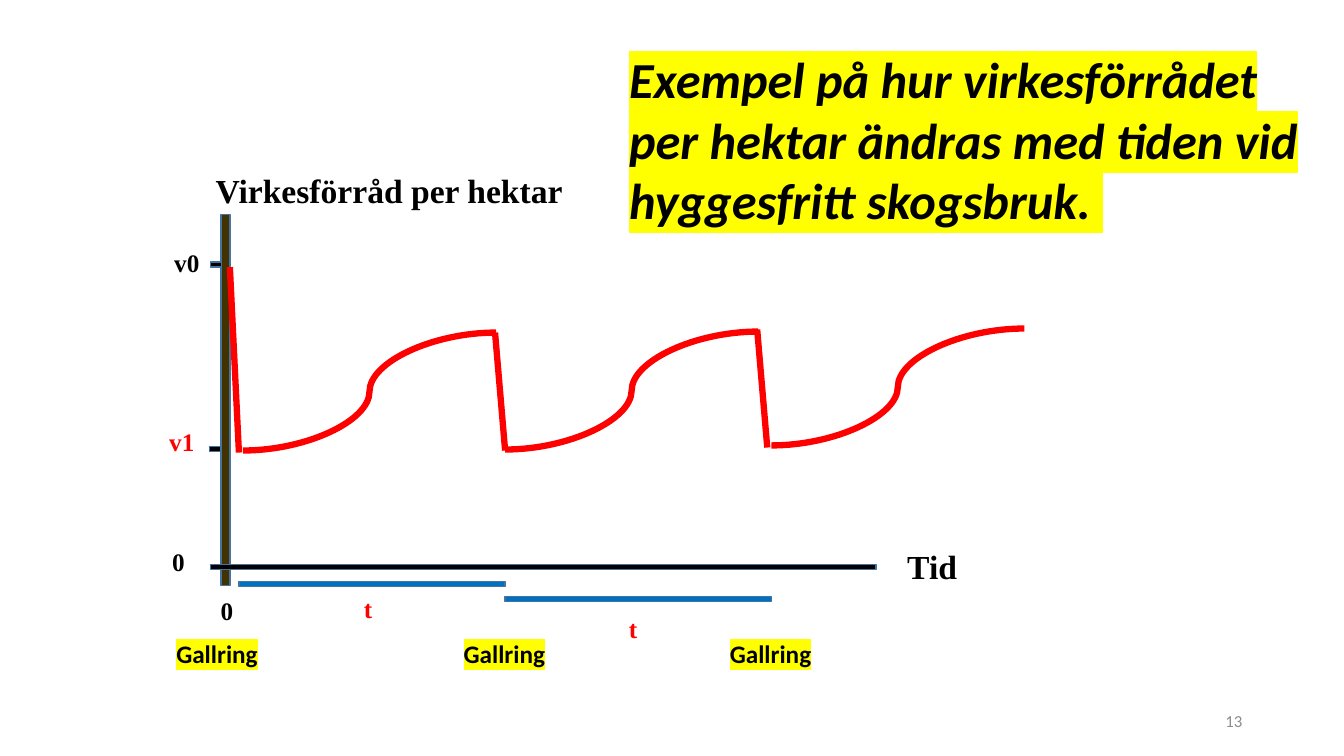
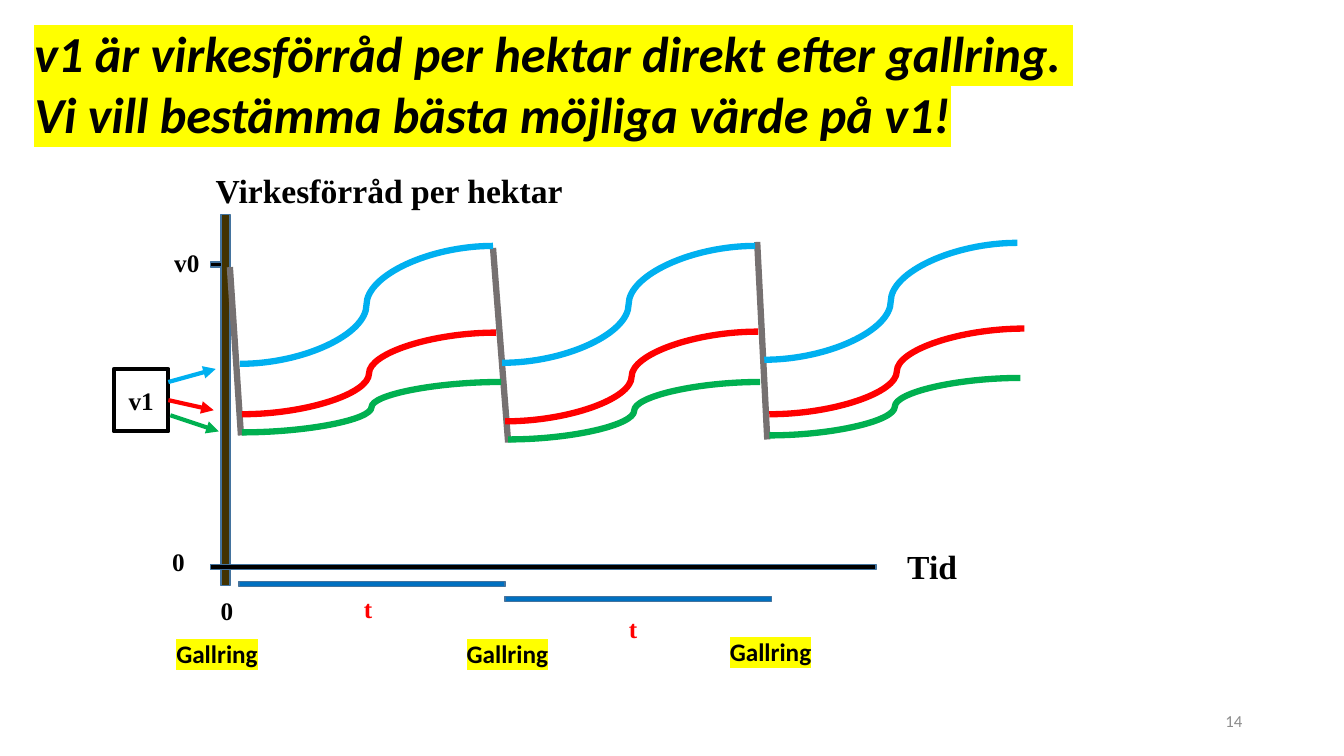
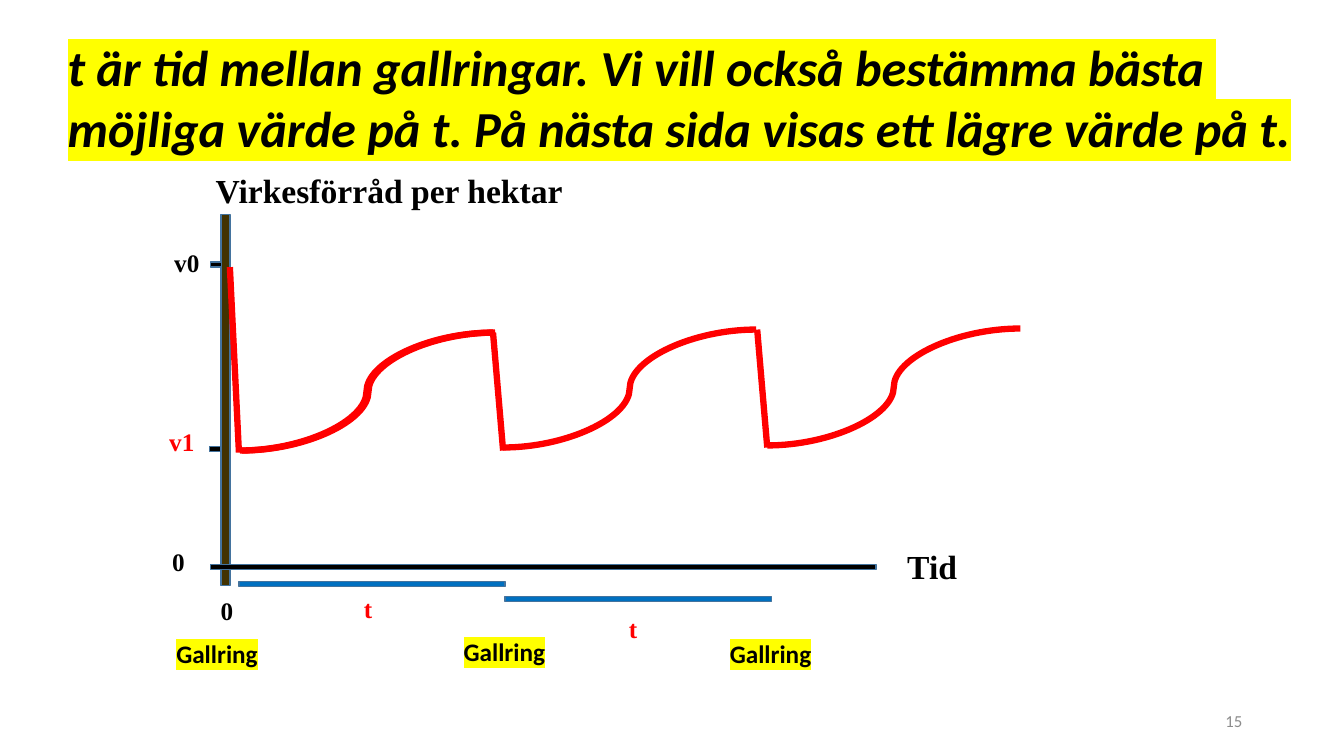
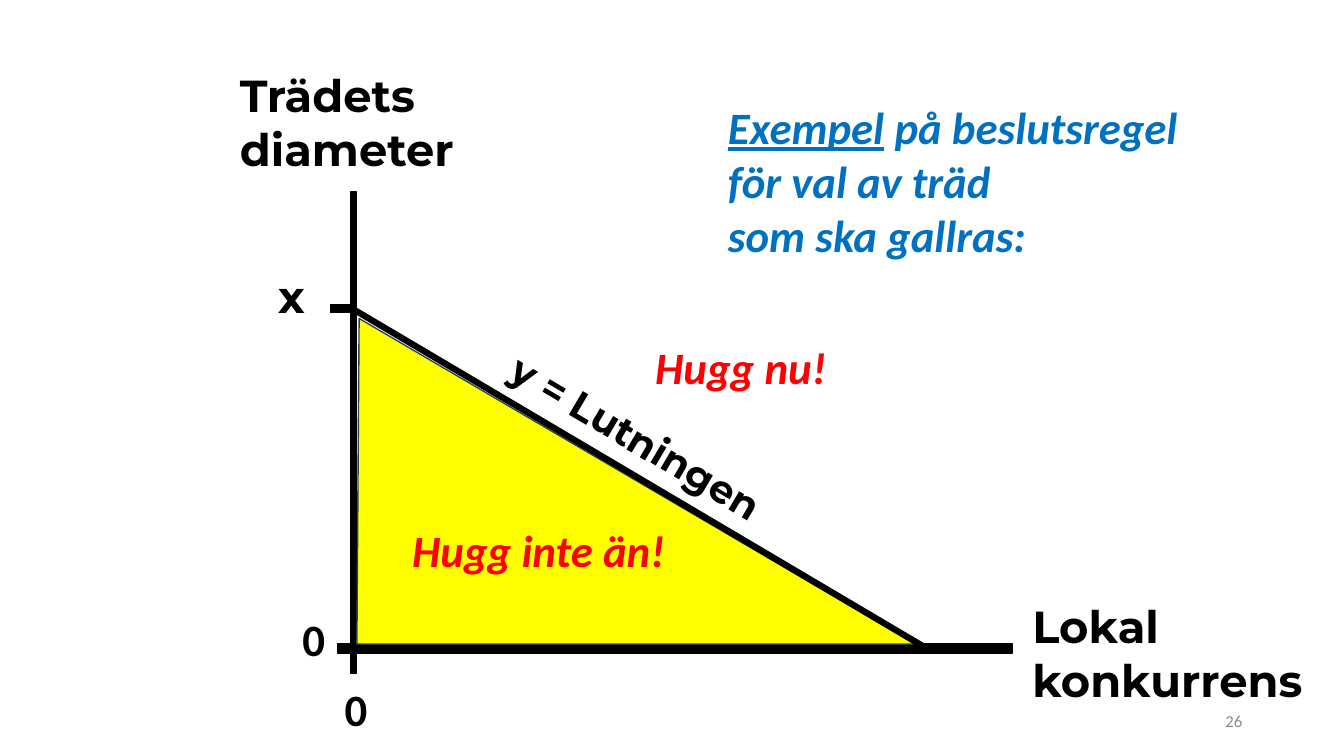
from copy import deepcopy
from lxml.etree import SubElement
from pptx import Presentation
from pptx.dml.color import RGBColor
from pptx.enum.shapes import MSO_CONNECTOR as LINK, MSO_SHAPE as KIND
from pptx.enum.text import MSO_ANCHOR as ANCHOR, MSO_AUTO_SIZE as AUTO, PP_ALIGN as ALIGN
from pptx.oxml.ns import qn
from pptx.util import Pt

PX = 9144
BLACK = RGBColor(0x00, 0x00, 0x00)
BROWN = RGBColor(0x42, 0x32, 0x00)
STEEL = RGBColor(0x43, 0x73, 0x9E)
NAVY = RGBColor(0x28, 0x44, 0x5D)
BLUE = RGBColor(0x00, 0x70, 0xC0)
SKY = RGBColor(0x00, 0xB0, 0xF0)
GREEN = RGBColor(0x00, 0xB0, 0x50)
RED = RGBColor(0xFF, 0x00, 0x00)
YELLOW = RGBColor(0xFF, 0xFF, 0x00)
GRAY = RGBColor(0x76, 0x71, 0x71)
PALE = RGBColor(0x8C, 0x8C, 0x8C)
SERIF, SANS, WIDE = "Times New Roman", "Calibri", "Montserrat"

HEAD = (36, SANS, BLACK, True, True, True)
RULE = (32, SANS, BLUE, True, True, False)
AXIS = (24, SERIF, BLACK, True, False, False)
MARK = (18, SERIF, BLACK, True, False, False)
HOT = (18, SERIF, RED, True, False, False)
CUT = (18, SANS, BLACK, True, False, True)
NAME = (32, WIDE, BLACK, True, False, False)
ZERO = (32, SANS, BLACK, True, False, False)
CALL = (32, SANS, RED, True, True, False)
TILT = (28, WIDE, BLACK, True, False, False)
PAGE = (12, SANS, PALE, False, False, False)


def write(frame, text, look):
    size, face, color, bold, slant, mark = look
    frame.text = text
    frame.word_wrap = False
    frame.auto_size = AUTO.NONE
    frame.vertical_anchor = ANCHOR.TOP
    for para in frame.paragraphs:
        para.alignment = ALIGN.LEFT
        for run in para.runs:
            font = run.font
            font.size, font.name, font.bold, font.italic = Pt(size), face, bold, slant
            font.color.rgb = color
            if mark:
                props = run._r.get_or_add_rPr()
                glow = SubElement(props, qn("a:highlight"))
                SubElement(glow, qn("a:srgbClr")).set("val", str(YELLOW))
                props.find(qn("a:latin")).addprevious(glow)


def draw(slide, kind, ends, color, width=4.5):
    link = slide.shapes.add_connector(kind, *[n * PX for n in ends])
    link.line.color.rgb = color
    link.line.width = Pt(width)
    SubElement(link._element.spPr, qn("a:effectLst"))
    return link


RECT = KIND.RECTANGLE
bars = [
    (RECT, 219, 213, 9, 368, BROWN, STEEL, 1),
    (RECT, 209, 560, 660, 5, BLACK, STEEL, 1),
    (RECT, 209, 260, 11, 5, BLACK, STEEL, 1),
    (RECT, 237, 577, 264, 5, BLUE, STEEL, 1),
    (RECT, 501, 592, 264, 5, BLUE, STEEL, 1),
]
tick = [(RECT, 208, 443, 11, 5, BLACK, STEEL, 1)]
frame = [(RECT, 113, 366, 54, 62, None, BLACK, 3)]
field = [
    (RECT, 335, 639, 669, 9, BLACK, BLACK, 1),
    (RECT, 348, 190, 5, 478, BLACK, BLACK, 1),
    (KIND.ISOSCELES_TRIANGLE, 354, 316, 554, 323, YELLOW, NAVY, 1),
]

marks = [
    ("Tid", 890, 537, 190, 50, AXIS),
    ("Virkesförråd per hektar", 204, 164, 364, 50, AXIS),
    ("0", 209, 586, 42, 40, MARK),
    ("0", 161, 537, 33, 40, MARK),
    ("v0", 163, 240, 46, 40, MARK),
    ("t", 351, 584, 30, 40, HOT),
    ("t", 614, 604, 30, 40, HOT),
    ("Gallring", 165, 628, 102, 40, CUT),
]
low = [("v1", 158, 418, 46, 40, HOT)]
names = [
    ("Lokal\nkonkurrens", 1014, 589, 298, 118, NAME),
    ("Trädets\ndiameter", 228, 62, 240, 118, NAME),
    ("0", 332, 671, 43, 64, ZERO),
    ("0", 290, 602, 43, 64, ZERO),
    ("x", 266, 262, 49, 64, NAME),
    ("y = Lutningen", 481, 408, 310, 57, TILT),
    ("Hugg inte än!", 399, 514, 273, 64, CALL),
    ("Hugg nu!", 640, 332, 192, 64, CALL),
]
cuts = [
    [(450, 628), (714, 628)],
    [(453, 628), (714, 626)],
    [(450, 626), (714, 628)],
]
cuts = [[("Gallring", x, y, 102, 40, CUT) for x, y in row] for row in cuts]

drops = [
    [(228, 265, 237, 449), (491, 330, 501, 447), (751, 327, 761, 444)],
    [(228, 265, 239, 432), (489, 246, 504, 439), (751, 240, 761, 436)],
    [(228, 265, 237, 449), (489, 330, 499, 447), (751, 327, 761, 444)],
    [],
]
waves = [
    [(RED, [(241, 447, 492, 330), (501, 446, 752, 329), (765, 442, 1016, 326)])],
    [
        (RED, [(240, 411, 492, 330), (501, 418, 752, 329), (763, 411, 1016, 326)]),
        (SKY, [(238, 361, 489, 244), (498, 360, 749, 244), (758, 357, 1009, 241)]),
        (GREEN, [(240, 429, 497, 379), (504, 436, 754, 379), (763, 432, 1012, 375)]),
    ],
    [(RED, [(238, 447, 489, 330), (499, 444, 750, 327), (761, 442, 1012, 326), (240, 447, 491, 330)])],
    [],
]
heads = [
    ("Exempel på hur virkesförrådet\nper hektar ändras med tiden vid\nhyggesfritt skogsbruk. ",
     614, 43, 719, 192, HEAD),
    ("v1 är virkesförråd per hektar direkt efter gallring. \nVi vill bestämma bästa möjliga värde på v1!",
     24, 17, 1200, 131, HEAD),
    ("t är tid mellan gallringar. Vi vill också bestämma bästa \n"
     "möjliga värde på t. På nästa sida visas ett lägre värde på t.",
     57, 31, 1276, 131, HEAD),
    ("Exempel på beslutsregel\nför val av träd\nsom ska gallras:", 712, 94, 481, 172, RULE),
]
forms = [bars + tick, bars + frame, bars + tick, field]
labels = [marks + low + cuts[0], marks + cuts[1], marks + low + cuts[2], names]
shades = [RED, GRAY, RED, BLACK]
pages = ["13", "14", "15", "26"]

deck = Presentation()
deck.slide_width, deck.slide_height = 1333 * PX, 750 * PX
slides, lasts = [], []

for head, form, fall, wave, shade, label, page in zip(heads, forms, drops, waves, shades, labels, pages):
    slide = deck.slides.add_slide(deck.slide_layouts[5])
    slides.append(slide)
    text, x, y, w, h, look = head
    title = slide.shapes.title
    title.left, title.top, title.width, title.height = x * PX, y * PX, w * PX, h * PX
    write(title.text_frame, text, look)

    for kind, x, y, w, h, fill, edge, width in form:
        shape = slide.shapes.add_shape(kind, x * PX, y * PX, w * PX, h * PX)
        shape.shadow.inherit = False
        if fill is None:
            shape.fill.background()
        else:
            shape.fill.solid()
            shape.fill.fore_color.rgb = fill
        shape.line.color.rgb = edge
        shape.line.width = Pt(width)
    lasts.append(shape)

    for ends in fall:
        draw(slide, LINK.STRAIGHT, ends, shade)
    for color, curves in wave:
        for ends in curves:
            draw(slide, LINK.CURVE, ends, color)

    for text, x, y, w, h, look in label + [(page, 942, 695, 300, 40, PAGE)]:
        box = slide.shapes.add_textbox(x * PX, y * PX, w * PX, h * PX)
        write(box.text_frame, text, look)
        if look is TILT:
            box.rotation = 30.7
        if look is PAGE:
            box.text_frame.vertical_anchor = ANCHOR.MIDDLE
            box.text_frame.paragraphs[0].alignment = ALIGN.RIGHT

start = lasts[1]
write(start.text_frame, "v1", MARK)
start.text_frame.vertical_anchor = ANCHOR.MIDDLE
start.text_frame.paragraphs[0].alignment = ALIGN.CENTER
for ends, color in [
    ((169, 412, 217, 428), GREEN),
    ((167, 397, 212, 407), RED),
    ((167, 379, 214, 366), SKY),
]:
    arrow = draw(slides[1], LINK.STRAIGHT, ends, color, 3)
    SubElement(arrow.line._get_or_add_ln(), qn("a:tailEnd")).set("type", "triangle")
    if color == RED:
        arrow.begin_connect(start, 3)

lasts[3].adjustments[0] = 0.004
draw(slides[3], LINK.STRAIGHT, (349, 306, 917, 642), BLACK)
draw(slides[3], LINK.STRAIGHT, (351, 306, 327, 306), BLACK, 6)
first = slides[3].shapes.title.text_frame.paragraphs[0]
first.runs[0]._r.addnext(deepcopy(first.runs[0]._r))
first.runs[0].text, first.runs[1].text = "Exempel", " på beslutsregel"
first.runs[0].font.underline = True

deck.save("out.pptx")
